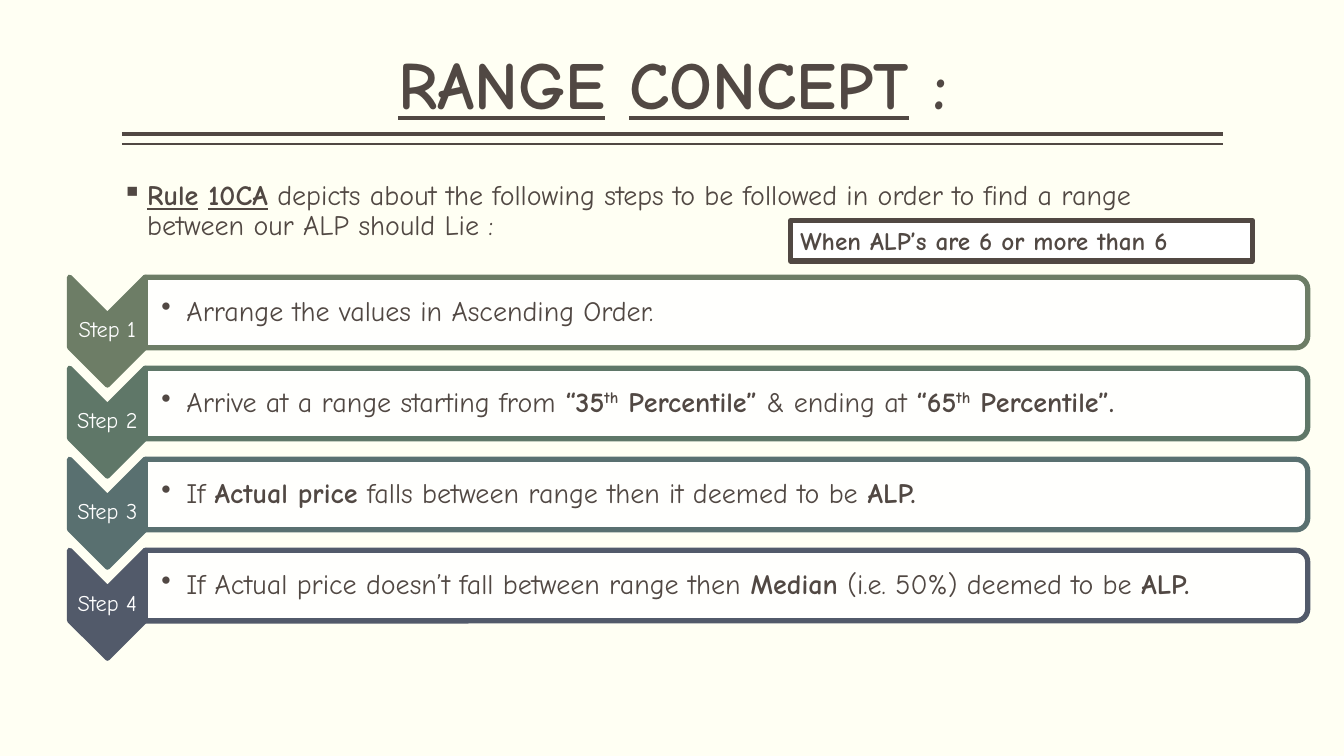
"""Build the Range Concept slide with its four numbered steps."""
from dataclasses import dataclass
from typing import Any, Optional

import pptx
import pptx.dml.color
import pptx.enum.shapes
import pptx.enum.text
import pptx.oxml
import pptx.oxml.ns
import pptx.util

Inches = pptx.util.Inches
Shape = pptx.enum.shapes.MSO_SHAPE
Anchor = pptx.enum.text.MSO_ANCHOR
Align = pptx.enum.text.PP_ALIGN


@dataclass(frozen=True)
class Theme:
    font: str = "Comic Neue"
    paper: str = "FFFFF3"
    ink: str = "514843"
    white: str = "FFFFFF"
    title_size: float = 48
    body_size: float = 20
    note_size: float = 18
    label_size: float = 16
    border: float = 3.78
    panel_opacity: int = 90


@dataclass(frozen=True)
class Span:
    text: str
    bold: bool = False
    underline: bool = False
    raised: bool = False


@dataclass(frozen=True)
class Area:
    left: float
    top: float
    width: float
    height: float

    def lengths(self) -> list[int]:
        return [Inches(v) for v in (self.left, self.top, self.width, self.height)]

    def turned(self) -> "Area":
        shift = (self.width - self.height) / 2
        return Area(self.left + shift, self.top - shift, self.height, self.width)


@dataclass(frozen=True)
class Step:
    color: str
    spans: list[Span]


@dataclass(frozen=True)
class Rule:
    top: float
    weight: float


THEME = Theme()
RULES = [Rule(1.33, 3), Rule(1.43, 1)]
TITLE = [Span("RANGE", True, True), Span(" ", True), Span("CONCEPT", True, True), Span(" :", True)]
INTRO = [
    Span("Rule", True, True), Span(" ", True), Span("10CA", True, True),
    Span(" depicts about the following steps to be followed in order to find a range "
         "between our ALP should Lie :"),
]
NOTE = [Span("When ALP’s are 6 or more than 6", True)]
STEPS = [
    Step("6D7D66", [Span("Arrange the values in Ascending Order.")]),
    Step("5F7768", [
        Span("Arrive at a range starting from "),
        Span("“35", True), Span("th", True, raised=True), Span(" Percentile”", True),
        Span(" & ending at "),
        Span("“65", True), Span("th", True, raised=True), Span(" Percentile”.", True),
    ]),
    Step("597070", [
        Span("If "), Span("Actual price", True),
        Span(" falls between range then it deemed to be "), Span("ALP.", True),
    ]),
    Step("525A6A", [
        Span("If Actual price doesn’t fall between range then "), Span("Median", True),
        Span(" (i.e. 50%) deemed to be "), Span("ALP.", True),
    ]),
]
FIRST_TOP, LAST_TOP = 2.75, 5.46
STEP_PITCH = (LAST_TOP - FIRST_TOP) / (len(STEPS) - 1)


def rgb(code: str) -> pptx.dml.color.RGBColor:
    return pptx.dml.color.RGBColor.from_string(code)


def add_bullet(para: Any, mark: str) -> None:
    properties = para._p.get_or_add_pPr()
    properties.set("marL", str(Inches(0.25)))
    properties.set("indent", str(Inches(-0.25)))
    bullet = f'<a:buChar {pptx.oxml.ns.nsdecls("a")} char="{mark}"/>'
    properties.append(pptx.oxml.parse_xml(bullet))


def write(box: Any, spans: list[Span], size: float, color: str = THEME.ink,
          align: Any = Align.LEFT, anchor: Any = Anchor.MIDDLE,
          insets: tuple[float, float, float, float] = (0.01, 0.01, 0.01, 0.01),
          bullet: Optional[str] = None, spacing: float = 0.9) -> None:
    frame = box.text_frame
    frame.word_wrap = True
    frame.vertical_anchor = anchor
    frame.margin_left, frame.margin_top, frame.margin_right, frame.margin_bottom = map(Inches, insets)
    para = frame.paragraphs[0]
    para.alignment = align
    para.line_spacing = spacing
    if bullet:
        add_bullet(para, bullet)
    for part in spans:
        span = para.add_run()
        span.text = part.text
        span.font.name = THEME.font
        span.font.size = pptx.util.Pt(size)
        span.font.color.rgb = rgb(color)
        span.font.bold = part.bold
        span.font.underline = part.underline
        if part.raised:
            span._r.get_or_add_rPr().set("baseline", "30000")


def add_box(page: Any, area: Area) -> Any:
    return page.shapes.add_textbox(*area.lengths())


def add_outline(page: Any, kind: Any, area: Area, fill: str, line: str) -> Any:
    shape = page.shapes.add_shape(kind, *area.lengths())
    shape.shadow.inherit = False
    shape.fill.solid()
    shape.fill.fore_color.rgb = rgb(fill)
    shape.line.color.rgb = rgb(line)
    shape.line.width = pptx.util.Pt(THEME.border)
    return shape


def add_rule(page: Any, rule: Rule) -> None:
    line = page.shapes.add_connector(
        pptx.enum.shapes.MSO_CONNECTOR.STRAIGHT,
        Inches(1.21), Inches(rule.top), Inches(12.13), Inches(rule.top))
    line.line.color.rgb = rgb(THEME.ink)
    line.line.width = pptx.util.Pt(rule.weight)
    effects = f'<a:effectLst {pptx.oxml.ns.nsdecls("a")}/>'
    line._element.spPr.append(pptx.oxml.parse_xml(effects))


def add_step(page: Any, number: int, step: Step) -> None:
    top = FIRST_TOP + (number - 1) * STEP_PITCH
    chevron_area = Area(0.69, top, 0.75, 1.07).turned()
    chevron = add_outline(page, Shape.CHEVRON, chevron_area, step.color, step.color)
    chevron.rotation = 90
    label = add_box(page, Area(0.69, top + 0.37, 0.75, 0.32))
    write(label, [Span(f"Step {number}")], THEME.label_size, THEME.white, Align.CENTER)
    panel_area = Area(1.44, top, 11.53, 0.7).turned()
    panel = add_outline(page, Shape.ROUND_2_SAME_RECTANGLE, panel_area, THEME.white, step.color)
    panel.rotation = 90
    tint = panel._element.spPr.find(".//" + pptx.oxml.ns.qn("a:srgbClr"))
    alpha = f'<a:alpha {pptx.oxml.ns.nsdecls("a")} val="{THEME.panel_opacity * 1000}"/>'
    tint.append(pptx.oxml.parse_xml(alpha))
    content = add_box(page, Area(1.44, top + 0.03, 11.5, 0.63))
    write(content, step.spans, THEME.body_size, insets=(0.16, 0.01, 0.01, 0.01), bullet="•")


def main() -> None:
    deck = pptx.Presentation()
    deck.slide_width, deck.slide_height = Inches(13.33), Inches(7.5)
    page = deck.slides.add_slide(deck.slide_layouts[6])
    page.background.fill.solid()
    page.background.fill.fore_color.rgb = rgb(THEME.paper)
    for rule in RULES:
        add_rule(page, rule)
    flush = (0, 0.05, 0, 0.05)
    write(add_box(page, Area(1.21, 0.08, 10.92, 1.2)), TITLE, THEME.title_size,
          align=Align.CENTER, anchor=Anchor.BOTTOM, insets=flush)
    write(add_box(page, Area(1.21, 1.75, 10.92, 0.75)), INTRO, THEME.body_size,
          anchor=Anchor.TOP, insets=flush, bullet="▪")
    for number, step in enumerate(STEPS, 1):
        add_step(page, number, step)
    note = add_outline(page, Shape.RECTANGLE, Area(7.84, 2.19, 4.58, 0.4), THEME.white, THEME.ink)
    write(note, NOTE, THEME.note_size, anchor=Anchor.TOP, insets=(0.1, 0.05, 0.1, 0.05), spacing=1.0)
    deck.save("out.pptx")


if __name__ == "__main__":
    main()
